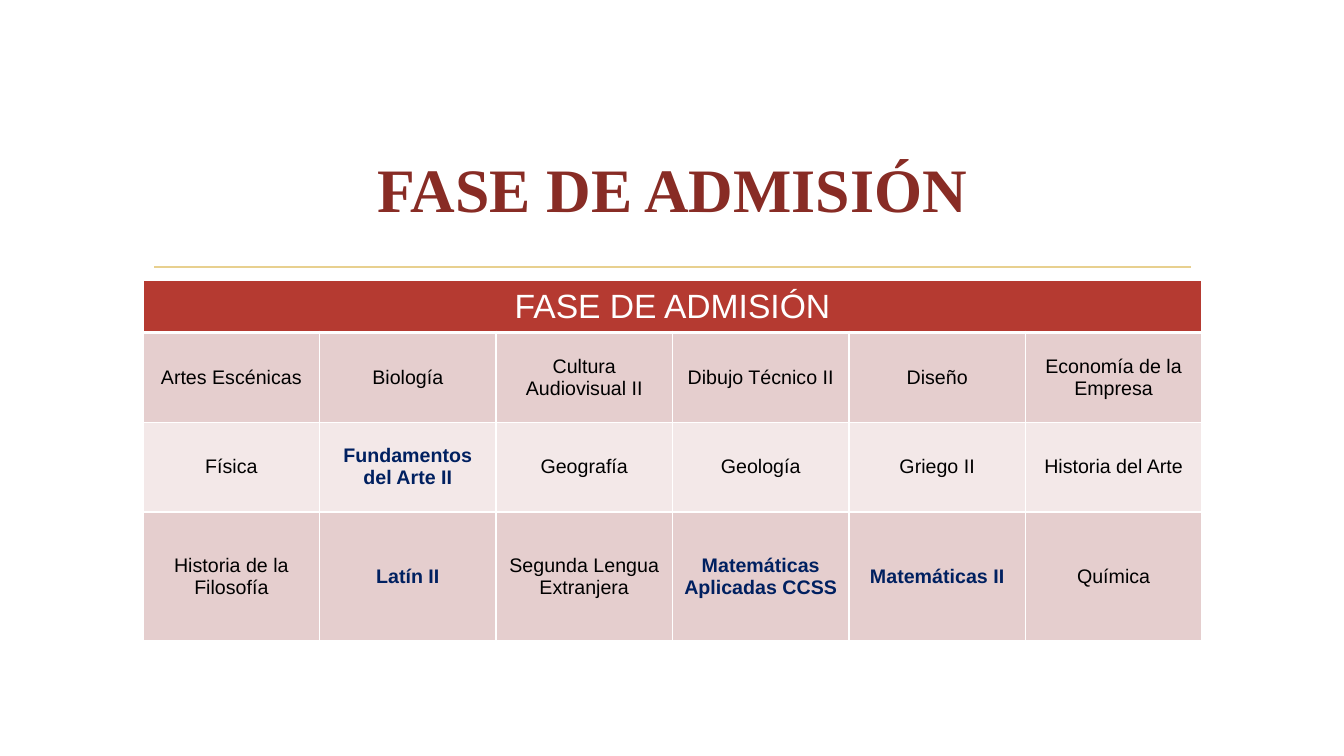
"""Build the slide that lists the subjects of the admission phase."""
from dataclasses import dataclass

from lxml import etree
from pptx import Presentation
from pptx.dml.color import RGBColor
from pptx.enum.shapes import MSO_CONNECTOR
from pptx.enum.text import MSO_ANCHOR, MSO_AUTO_SIZE, PP_ALIGN
from pptx.oxml.ns import qn
from pptx.slide import Slide
from pptx.table import _Cell
from pptx.util import Inches, Pt

STRAIGHT = MSO_CONNECTOR.STRAIGHT
MIDDLE = MSO_ANCHOR.MIDDLE
CENTER = PP_ALIGN.CENTER
NO_FIT = MSO_AUTO_SIZE.NONE

COLORS = {
    "title": "882C25",
    "rule": "E8D08F",
    "header": "B53A31",
    "odd_row": "E5CECE",
    "even_row": "F3E8E8",
    "white": "FFFFFF",
    "black": "000000",
    "navy": "002060",
}
HEADING = "FASE DE ADMISIÓN"
LEFT, COLUMN, COLUMNS = 1.42, 1.75, 6
WIDTH = COLUMN * COLUMNS
TITLE_TOP, TITLE_HEIGHT = 1.07, 1.43
RULE_LEFT, RULE_RIGHT, RULE_TOP = 1.53, 11.81, 2.65
TABLE_TOP = 2.78
ROW_HEIGHTS = (0.52, 0.89, 0.89, 1.28)


@dataclass(frozen=True)
class Subject:
    name: str
    highlighted: bool = False


SUBJECTS = (
    Subject("Artes Escénicas"),
    Subject("Biología"),
    Subject("Cultura Audiovisual II"),
    Subject("Dibujo Técnico II"),
    Subject("Diseño"),
    Subject("Economía de la Empresa"),
    Subject("Física"),
    Subject("Fundamentos del Arte II", True),
    Subject("Geografía"),
    Subject("Geología"),
    Subject("Griego II"),
    Subject("Historia del Arte"),
    Subject("Historia de la Filosofía"),
    Subject("Latín II", True),
    Subject("Segunda Lengua Extranjera"),
    Subject("Matemáticas Aplicadas CCSS", True),
    Subject("Matemáticas II", True),
    Subject("Química"),
)


def rgb(name: str) -> RGBColor:
    return RGBColor.from_string(COLORS[name])


def add_borders(cell: _Cell, bottom: float, top: float) -> None:
    properties = cell._tc.get_or_add_tcPr()
    widths = {"a:lnL": 1, "a:lnR": 1, "a:lnT": top, "a:lnB": bottom}
    for position, (tag, width) in enumerate(widths.items()):
        border = etree.Element(qn(tag), w=str(Pt(width)))
        fill = etree.SubElement(border, qn("a:solidFill"))
        etree.SubElement(fill, qn("a:srgbClr"), val=COLORS["white"])
        properties.insert(position, border)


def fill_cell(cell: _Cell, text: str, size: int, color: str, fill: str, bold: bool) -> None:
    cell.text = text
    cell.vertical_anchor = MIDDLE
    cell.fill.solid()
    cell.fill.fore_color.rgb = rgb(fill)
    paragraph = cell.text_frame.paragraphs[0]
    paragraph.alignment = CENTER
    font = paragraph.font
    font.name, font.size, font.bold = "Arial", Pt(size), bold
    font.color.rgb = rgb(color)


def add_title(slide: Slide) -> None:
    title = slide.shapes.title
    title.left, title.top = Inches(LEFT), Inches(TITLE_TOP)
    title.width, title.height = Inches(WIDTH), Inches(TITLE_HEIGHT)
    frame = title.text_frame
    frame.text = HEADING
    frame.auto_size = NO_FIT
    frame.vertical_anchor = MIDDLE
    frame.margin_top = Inches(0.2)
    paragraph = frame.paragraphs[0]
    paragraph.alignment = CENTER
    font = paragraph.font
    font.name, font.size, font.bold = "Times New Roman", Pt(44.1), True
    font.color.rgb = rgb("title")


def add_rule(slide: Slide) -> None:
    rule = slide.shapes.add_connector(
        STRAIGHT, Inches(RULE_LEFT), Inches(RULE_TOP), Inches(RULE_RIGHT), Inches(RULE_TOP)
    )
    rule.line.color.rgb = rgb("rule")
    rule.line.width = Pt(1.25)
    etree.SubElement(rule._element.spPr, qn("a:effectLst"))


def add_subjects(slide: Slide) -> None:
    table = slide.shapes.add_table(
        len(ROW_HEIGHTS), COLUMNS, Inches(LEFT), Inches(TABLE_TOP),
        Inches(WIDTH), Inches(sum(ROW_HEIGHTS)),
    ).table
    for row, height in zip(table.rows, ROW_HEIGHTS):
        row.height = Inches(height)
    heading = table.cell(0, 0)
    heading.merge(table.cell(0, COLUMNS - 1))
    fill_cell(heading, HEADING, 24, "white", "header", False)
    for index, subject in enumerate(SUBJECTS):
        row, column = divmod(index, COLUMNS)
        fill_cell(
            table.cell(row + 1, column), subject.name, 14,
            "navy" if subject.highlighted else "black",
            "even_row" if row % 2 else "odd_row",
            subject.highlighted,
        )
    for row in range(len(ROW_HEIGHTS)):
        for column in range(COLUMNS):
            add_borders(table.cell(row, column), 3 if row == 0 else 1, 3 if row == 1 else 1)


def main() -> None:
    deck = Presentation()
    deck.slide_width, deck.slide_height = Inches(13.33), Inches(7.5)
    slide = deck.slides.add_slide(deck.slide_layouts.get_by_name("Title Only"))
    add_rule(slide)
    add_title(slide)
    add_subjects(slide)
    deck.save("out.pptx")


if __name__ == "__main__":
    main()
